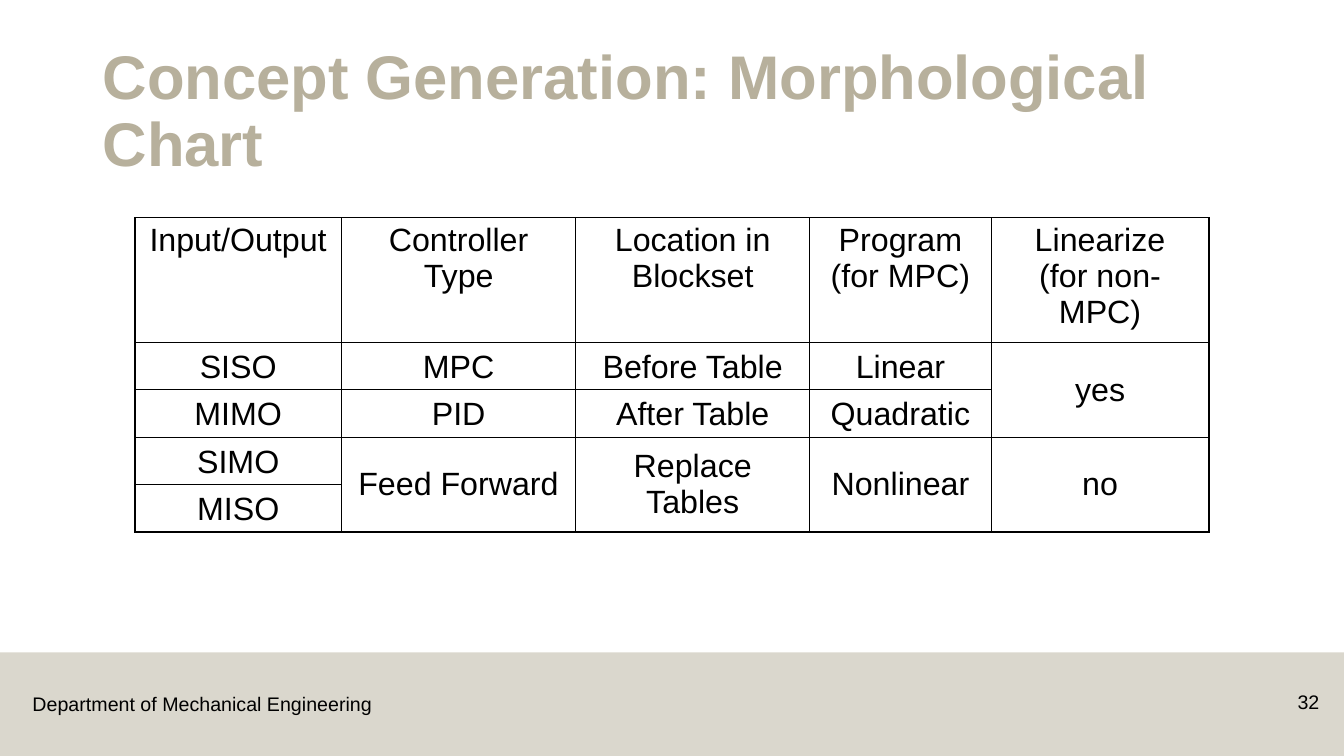
from dataclasses import dataclass

from lxml.etree import SubElement
from pptx import Presentation
from pptx.dml.color import RGBColor
from pptx.enum.shapes import MSO_SHAPE as Shape
from pptx.enum.text import MSO_ANCHOR as Anchor, MSO_AUTO_SIZE as AutoSize, PP_ALIGN as Align
from pptx.oxml import parse_xml
from pptx.oxml.ns import nsdecls, qn
from pptx.util import Cm, Pt

TITLE = "Concept Generation: Morphological Chart"
DEPARTMENT = "Department of Mechanical Engineering"
PAGE = "32"

HEADINGS = [
    ["Input/Output"],
    ["Controller", "Type"],
    ["Location in", "Blockset"],
    ["Program", "(for MPC)"],
    ["Linearize", "(for non-MPC)"],
]
# Options per column: (text, number of rows covered)
OPTIONS = [
    [("SISO", 1), ("MIMO", 1), ("SIMO", 1), ("MISO", 1)],
    [("MPC", 1), ("PID", 1), ("Feed Forward", 2)],
    [("Before Table", 1), ("After Table", 1), ("Replace Tables", 2)],
    [("Linear", 1), ("Quadratic", 1), ("Nonlinear", 2)],
    [("yes", 2), ("no", 2)],
]
COLUMN_WIDTHS = [5.21, 5.9, 5.9, 4.57, 5.49]
ROW_HEIGHTS = [2.26] + [1.12] * 4


@dataclass(frozen=True)
class Theme:
    font: str = "Arial"
    sand: RGBColor = RGBColor(0xB7, 0xB0, 0x9C)
    ink: RGBColor = RGBColor(0, 0, 0)
    band_opacity: int = 50
    title_size: int = 44
    table_size: int = 23
    footer_size: int = 14
    rule_width: int = 1


THEME = Theme()


def add_run(paragraph, text, size, color=THEME.ink, bold=False):
    run = paragraph.add_run()
    run.text = text
    run.font.name = THEME.font
    run.font.size = Pt(size)
    run.font.color.rgb = color
    run.font.bold = bold


def add_footer_band(slide):
    band = slide.shapes.add_shape(Shape.RECTANGLE, 0, Cm(16.44), Cm(33.87), Cm(2.61))
    band.shadow.inherit = False
    band.fill.solid()
    band.fill.fore_color.rgb = THEME.sand
    color = band.fill._xPr.find(qn("a:solidFill"))[0]
    SubElement(color, qn("a:alpha"), val=str(THEME.band_opacity * 1000))
    band.line.fill.background()


def add_footer_text(slide, text, left, top, width, height, align):
    box = slide.shapes.add_textbox(Cm(left), Cm(top), Cm(width), Cm(height))
    box.text_frame.word_wrap = True
    paragraph = box.text_frame.paragraphs[0]
    paragraph.alignment = align
    add_run(paragraph, text, THEME.footer_size)


def set_title(slide):
    title = slide.shapes.title
    title.left, title.top, title.width, title.height = Cm(2.33), Cm(1.01), Cm(29.21), Cm(3.68)
    title.text_frame.auto_size = AutoSize.NONE
    title.text_frame.vertical_anchor = Anchor.MIDDLE
    paragraph = title.text_frame.paragraphs[0]
    paragraph.alignment = Align.LEFT
    paragraph.line_spacing = 0.9
    add_run(paragraph, TITLE, THEME.title_size, THEME.sand, bold=True)


def rule_cell(cell):
    """Leave the cell unfilled and draw a line on all four sides."""
    cell.fill.background()
    properties = cell._tc.get_or_add_tcPr()
    for position, side in enumerate("LRTB"):
        properties.insert(position, parse_xml(
            f'<a:ln{side} {nsdecls("a")} w="{Pt(THEME.rule_width)}"><a:solidFill>'
            f'<a:srgbClr val="{THEME.ink}"/></a:solidFill></a:ln{side}>'))


def fill_cell(cell, lines, anchor):
    cell.vertical_anchor = anchor
    paragraph = cell.text_frame.paragraphs[0]
    paragraph.alignment = Align.CENTER
    for number, line in enumerate(lines):
        if number:
            paragraph.add_line_break()
        add_run(paragraph, line, THEME.table_size)


def add_morphological_chart(slide):
    chart = slide.shapes.add_table(
        len(ROW_HEIGHTS), len(COLUMN_WIDTHS), Cm(3.4), Cm(5.49),
        Cm(sum(COLUMN_WIDTHS)), Cm(sum(ROW_HEIGHTS))).table
    chart.first_row = chart.horz_banding = False
    for column, width in zip(chart.columns, COLUMN_WIDTHS):
        column.width = Cm(width)
    for row, height in zip(chart.rows, ROW_HEIGHTS):
        row.height = Cm(height)
    for cell in chart.iter_cells():
        cell.margin_top = cell.margin_bottom = Cm(0.11)
        rule_cell(cell)

    for column, (heading, options) in enumerate(zip(HEADINGS, OPTIONS)):
        fill_cell(chart.cell(0, column), heading, Anchor.TOP)
        row = 1
        for option, span in options:
            cell = chart.cell(row, column)
            if span > 1:
                cell.merge(chart.cell(row + span - 1, column))
            fill_cell(cell, [option], Anchor.MIDDLE if span > 1 else Anchor.BOTTOM)
            row += span


def main():
    deck = Presentation()
    deck.slide_width, deck.slide_height = Cm(33.87), Cm(19.05)
    slide = deck.slides.add_slide(deck.slide_layouts.get_by_name("Title Only"))
    add_footer_band(slide)
    add_footer_text(slide, DEPARTMENT, 0.57, 17.32, 9.12, 0.86, Align.LEFT)
    set_title(slide)
    add_footer_text(slide, PAGE, 31.55, 17.25, 1.95, 1.02, Align.RIGHT)
    add_morphological_chart(slide)
    deck.save("out.pptx")


if __name__ == "__main__":
    main()
